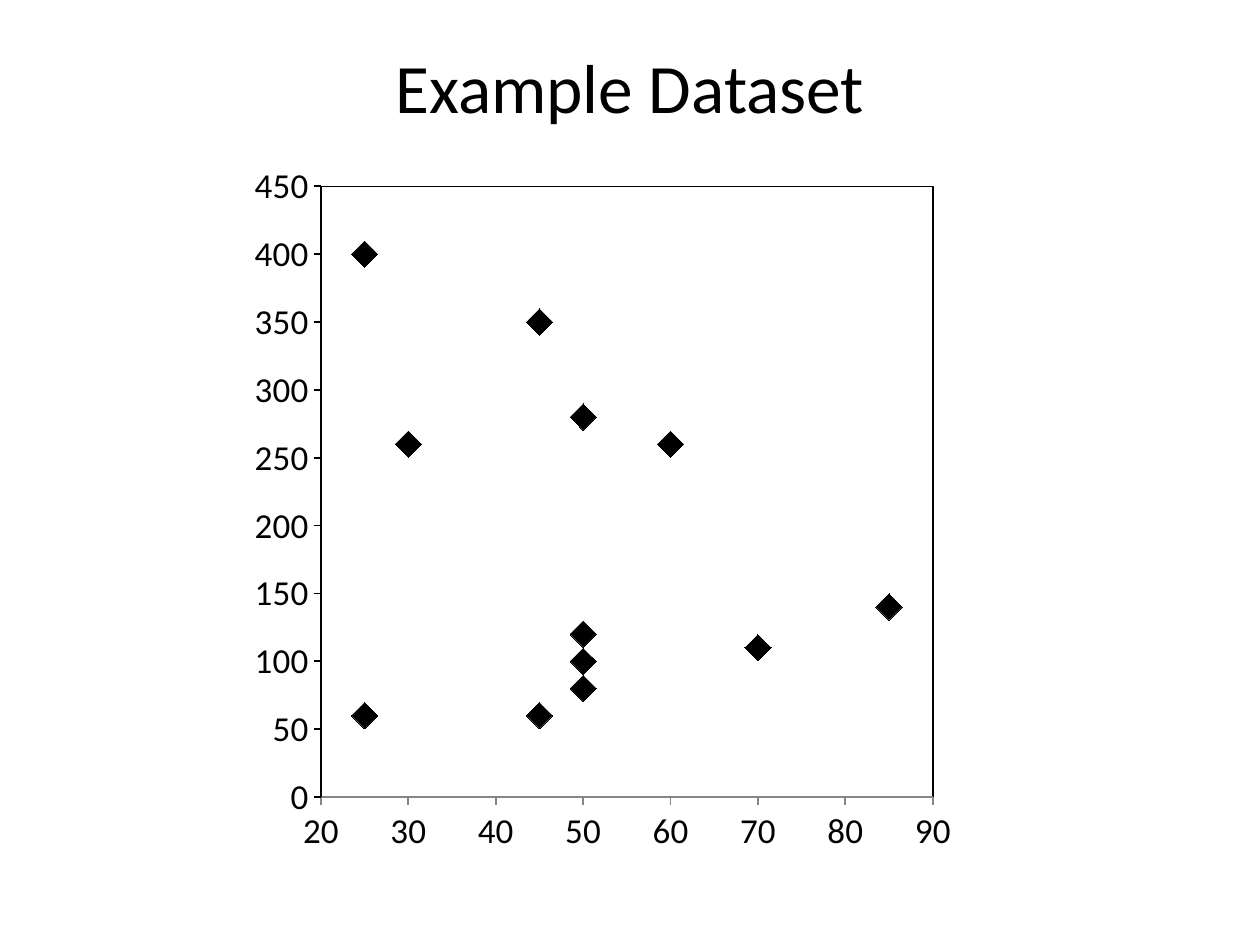
from lxml import etree
from pptx import Presentation
from pptx.chart import data
from pptx.dml import color
from pptx.enum import chart as ch, text
from pptx.oxml import parse_xml
from pptx.oxml import ns
from pptx.util import Pt


def rgb(value):
    return color.RGBColor.from_string(value)


BLACK, GREY = "000000", "868686"
deck = Presentation()
deck.slide_width, deck.slide_height = Pt(720), Pt(540)
slide = deck.slides.add_slide(deck.slide_layouts[5])

# Title
title = slide.shapes.title
title.left, title.top, title.width, title.height = Pt(36), Pt(21.6), Pt(648), Pt(54.7)
title.text_frame.vertical_anchor = text.MSO_ANCHOR.MIDDLE
heading = title.text_frame.paragraphs[0]
heading.alignment = text.PP_ALIGN.CENTER
run = heading.add_run()
run.text = "Example Dataset"
run.font.name, run.font.size = "Calibri", Pt(39.6)
run.font.color.rgb = rgb(BLACK)

# Dataset
dataset = data.XyChartData()
points = dataset.add_series("Series 1")
for x, y in [(25, 60), (45, 60), (50, 80), (50, 100), (50, 120), (70, 110),
             (85, 140), (30, 260), (25, 400), (45, 350), (50, 280), (60, 260)]:
    points.add_data_point(x, y)

# Scatter chart
scatter = slide.shapes.add_chart(
    ch.XL_CHART_TYPE.XY_SCATTER, Pt(125.5), Pt(84.4), Pt(432.7), Pt(409.7), dataset).chart
scatter.has_legend = False
scatter.has_title = False
scatter.font.name, scatter.font.size = "Calibri", Pt(10)
scatter.font.color.rgb = rgb(BLACK)
scatter.plots[0].vary_by_categories = False

# Diamond markers without a joining line
series = scatter.plots[0].series[0]
series.format.line.fill.background()
series.marker.style = ch.XL_MARKER_STYLE.DIAMOND
series.marker.size = 15
for paint in (series.marker.format.fill, series.marker.format.line.fill):
    paint.solid()
    paint.fore_color.rgb = rgb(BLACK)

# Axes
for axis, low, high, step, line in [
        (scatter.category_axis, 20, 90, 10, GREY),
        (scatter.value_axis, 0, 450, 50, BLACK)]:
    axis.minimum_scale, axis.maximum_scale, axis.major_unit = low, high, step
    axis.has_major_gridlines = False
    axis.major_tick_mark = ch.XL_TICK_MARK.OUTSIDE
    axis.minor_tick_mark = ch.XL_TICK_MARK.NONE
    axis.tick_labels.font.size = Pt(20)
    axis.tick_labels.font.name = "Calibri"
    axis.tick_labels.font.color.rgb = rgb(BLACK)
    axis.format.line.width = Pt(1)
    axis.format.line.color.rgb = rgb(line)

# Plot area: fixed inner position and black frame
plot_area = scatter._chartSpace.find(".//" + ns.qn("c:plotArea"))
for old in plot_area.findall(ns.qn("c:layout")):
    plot_area.remove(old)
layout = etree.Element(ns.qn("c:layout"))
manual = etree.SubElement(layout, ns.qn("c:manualLayout"))
for tag, value in [("layoutTarget", "inner"), ("xMode", "edge"), ("yMode", "edge"),
                   ("x", "0.134"), ("y", "0.054"), ("w", "0.808"), ("h", "0.852")]:
    etree.SubElement(manual, ns.qn("c:" + tag)).set("val", value)
plot_area.insert(0, layout)
for old in plot_area.findall(ns.qn("c:spPr")):
    plot_area.remove(old)
plot_area.append(parse_xml(
    f'<c:spPr {ns.nsdecls("c", "a")}><a:noFill/><a:ln w="{Pt(1)}"><a:solidFill>'
    f'<a:srgbClr val="{BLACK}"/></a:solidFill></a:ln></c:spPr>'))

deck.save("out.pptx")
